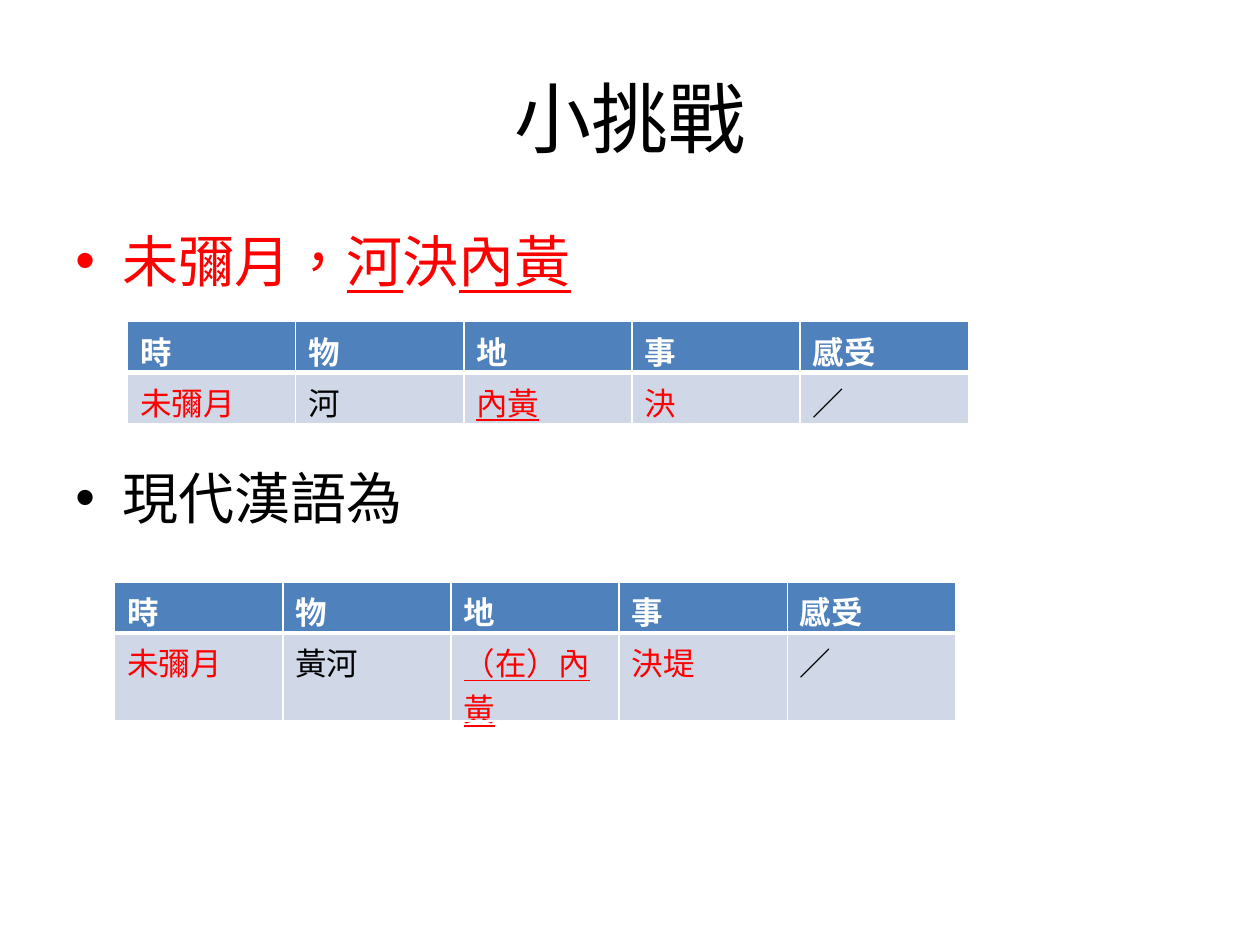
from lxml import etree
from pptx import Presentation
from pptx.dml.color import RGBColor
from pptx.enum.lang import MSO_LANGUAGE_ID
from pptx.enum.text import MSO_ANCHOR, PP_ALIGN
from pptx.oxml.ns import qn
from pptx.util import Cm, Pt

RED = RGBColor(0xFF, 0, 0)
BLACK = RGBColor(0, 0, 0)
WHITE = RGBColor(0xFF, 0xFF, 0xFF)
BLUE = RGBColor(0x4F, 0x81, 0xBD)
PALE = RGBColor(0xD0, 0xD8, 0xE8)
CENTER, MIDDLE = PP_ALIGN.CENTER, MSO_ANCHOR.MIDDLE
LANG = MSO_LANGUAGE_ID.TRADITIONAL_CHINESE
FONT = "Calibri"

TITLE = "小挑戰"
# Each bullet: space before in points, colour, (text, underlined) runs
BULLETS = [
    (6.4, RED, [("未彌月，", False), ("河", True), ("決", False), ("內黃", True)]),
    (97, BLACK, [("現代漢語為", False)]),
]
HEADS = ["時", "物", "地", "事", "感受"]
INKS = [RED, BLACK, RED, RED, BLACK]
PLACE = HEADS.index("地")
# Each table: left, top, height in cm, answers
TABLES = [
    (2.57, 6.48, 2.06, ["未彌月", "河", "內黃", "決", "／"]),
    (2.31, 11.73, 2.82, ["未彌月", "黃河", "（在）內黃", "決堤", "／"]),
]
COL, ROW = Cm(3.39), Cm(1.03)


def style(run, size, color, bold=False, line=False):
    font = run.font
    font.name, font.size, font.bold = FONT, Pt(size), bold
    font.underline = line
    font.language_id = LANG
    font.color.rgb = color


def add_box(slide, top, height):
    box = slide.shapes.add_textbox(Cm(1.27), Cm(top), Cm(22.86), Cm(height))
    box.text_frame.word_wrap = True
    return box.text_frame


def add_bullet(para):
    props = para._p.get_or_add_pPr()
    props.set("marL", str(Cm(0.95)))
    props.set("indent", str(-Cm(0.95)))
    etree.SubElement(props, qn("a:buFont"), typeface="Arial")
    etree.SubElement(props, qn("a:buChar"), char="•")


def set_edges(cell, **widths):
    """Draw white cell borders, widths in points by edge tag."""
    props = cell._tc.get_or_add_tcPr()
    for spot, (tag, width) in enumerate(widths.items()):
        edge = etree.Element(qn(f"a:{tag}"), w=str(Pt(width)))
        fill = etree.SubElement(edge, qn("a:solidFill"))
        etree.SubElement(fill, qn("a:srgbClr"), val=str(WHITE))
        props.insert(spot, edge)


def add_grid(slide, left, top, height, answers):
    table = slide.shapes.add_table(
        2, len(HEADS), Cm(left), Cm(top), COL * len(HEADS), Cm(height)).table
    for col in table.columns:
        col.width = COL
    for r, texts in enumerate((HEADS, answers)):
        table.rows[r].height = ROW
        for c, text in enumerate(texts):
            cell = table.cell(r, c)
            cell.text_frame.text = text
            head = r == 0
            style(cell.text_frame.paragraphs[0].runs[0], 18,
                  WHITE if head else INKS[c], head, not head and c == PLACE)
            cell.fill.solid()
            cell.fill.fore_color.rgb = BLUE if head else PALE
            set_edges(cell, lnL=1, lnR=1, lnT=1 if head else 3,
                      lnB=3 if head else 1)


def main():
    deck = Presentation()
    deck.slide_width, deck.slide_height = Cm(25.4), Cm(19.05)
    slide = deck.slides.add_slide(deck.slide_layouts[6])

    frame = add_box(slide, 0.76, 3.18)
    frame.vertical_anchor = MIDDLE
    frame.text = TITLE
    frame.paragraphs[0].alignment = CENTER
    style(frame.paragraphs[0].runs[0], 44, BLACK)

    frame = add_box(slide, 4.45, 12.57)
    for i, (space, color, parts) in enumerate(BULLETS):
        para = frame.add_paragraph() if i else frame.paragraphs[0]
        para.space_before = Pt(space)
        add_bullet(para)
        for text, line in parts:
            run = para.add_run()
            run.text = text
            style(run, 32, color, line=line)

    for spec in TABLES:
        add_grid(slide, *spec)
    deck.save("out.pptx")


if __name__ == "__main__":
    main()
